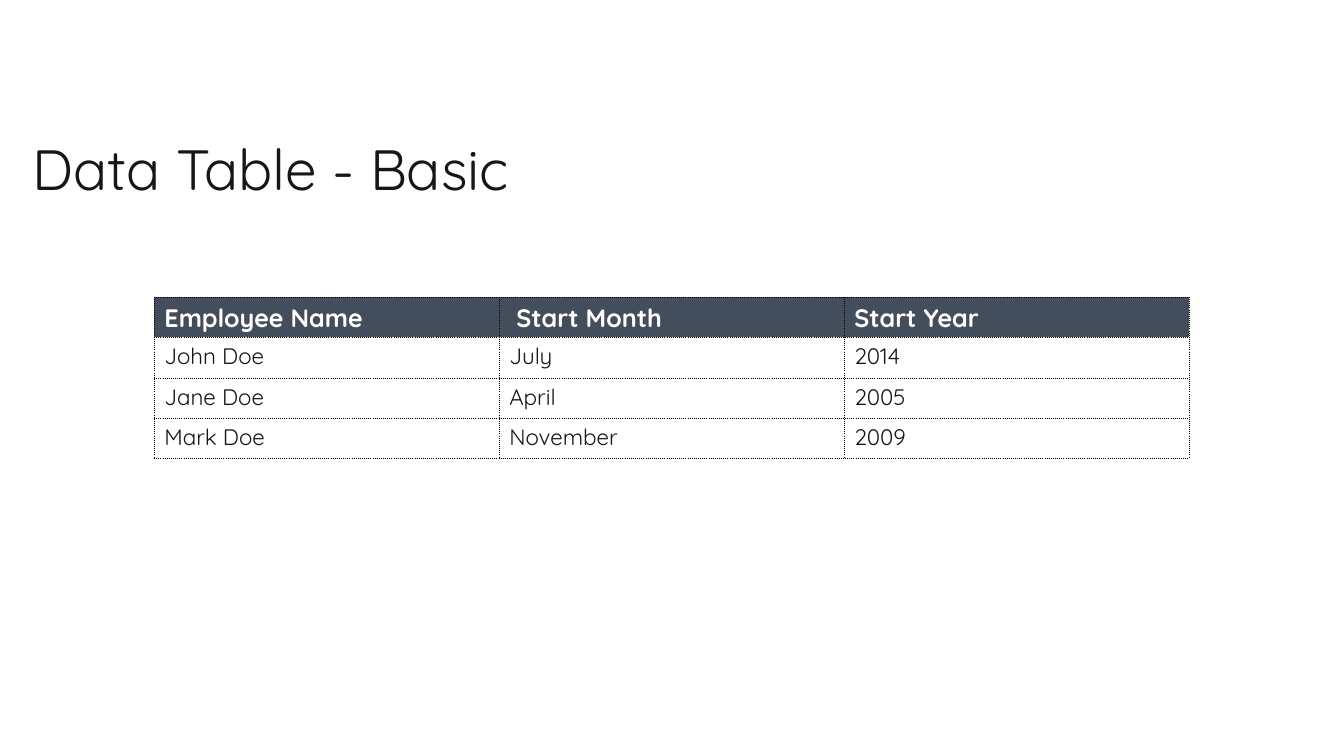
from dataclasses import dataclass

from lxml import etree
from pptx import Presentation
from pptx.dml.color import RGBColor
from pptx.enum import text
from pptx.oxml import ns
from pptx.util import Pt


@dataclass(frozen=True)
class Theme:
    font: str = "Quicksand"
    ink: str = "161617"
    header_ink: str = "FFFFFF"
    header_fill: str = "434E5C"
    border: str = "000000"
    border_width: float = 0.25
    title_size: float = 40.5
    header_size: float = 18
    body_size: float = 16


THEME = Theme()
EMPLOYEES = (
    ("Employee Name", " Start Month", "Start Year"),
    ("John Doe", "July", "2014"),
    ("Jane Doe", "April", "2005"),
    ("Mark Doe", "November", "2009"),
)


def add_run(paragraph, wording, size, color, bold=False):
    run = paragraph.add_run()
    run.text = wording
    run.font.name = THEME.font
    run.font.size = Pt(size)
    run.font.bold = bold
    run.font.color.rgb = RGBColor.from_string(color)


def add_title(slide, wording, left, top, width, height):
    frame = slide.shapes.add_textbox(Pt(left), Pt(top), Pt(width), Pt(height)).text_frame
    frame.word_wrap = True
    frame.vertical_anchor = text.MSO_ANCHOR.BOTTOM
    add_run(frame.paragraphs[0], wording, THEME.title_size, THEME.ink)


def add_dotted_borders(cell):
    properties = cell._tc.get_or_add_tcPr()
    for side in ("lnL", "lnR", "lnT", "lnB"):
        line = etree.SubElement(properties, ns.qn(f"a:{side}"), w=str(Pt(THEME.border_width)))
        fill = etree.SubElement(line, ns.qn("a:solidFill"))
        etree.SubElement(fill, ns.qn("a:srgbClr"), val=THEME.border)
        etree.SubElement(line, ns.qn("a:prstDash"), val="dot")


def fill_cell(cell, wording, is_header):
    add_dotted_borders(cell)
    paragraph = cell.text_frame.paragraphs[0]
    if is_header:
        cell.fill.solid()
        cell.fill.fore_color.rgb = RGBColor.from_string(THEME.header_fill)
        add_run(paragraph, wording, THEME.header_size, THEME.header_ink, bold=True)
    else:
        cell.fill.background()
        add_run(paragraph, wording, THEME.body_size, THEME.ink)


def add_data_table(slide, records, left, top, column_width, row_height):
    column_count = len(records[0])
    table = slide.shapes.add_table(
        len(records), column_count, Pt(left), Pt(top),
        Pt(column_width * column_count), Pt(row_height * len(records)),
    ).table
    table.horz_banding = False
    for row, record in enumerate(records):
        for column, wording in enumerate(record):
            fill_cell(table.cell(row, column), wording, is_header=row == 0)


def main():
    deck = Presentation()
    deck.slide_width, deck.slide_height = Pt(960), Pt(540)
    slide = deck.slides.add_slide(deck.slide_layouts[6])
    add_title(slide, "Data Table - Basic", 16, 72, 856, 75.5)
    add_data_table(slide, EMPLOYEES, 110.2, 212.2, 246.4, 28.8)
    deck.save("out.pptx")


if __name__ == "__main__":
    main()
